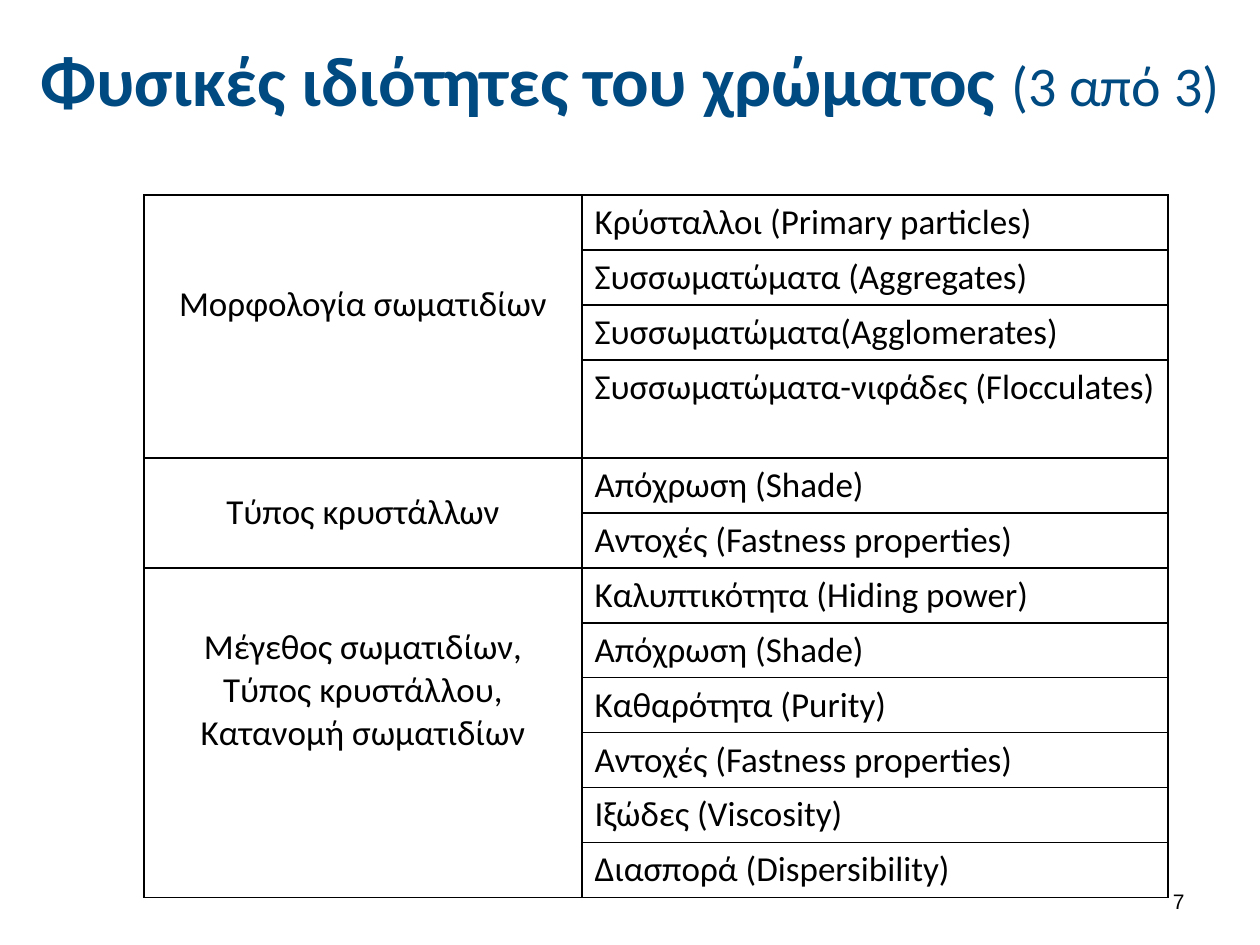
from dataclasses import dataclass

from lxml.etree import SubElement
from pptx import Presentation
from pptx.dml.color import RGBColor
from pptx.enum.text import MSO_ANCHOR as Anchor, PP_ALIGN as Align
from pptx.oxml.ns import qn
from pptx.util import Emu, Pt


@dataclass(frozen=True)
class Theme:
    title_color: str = "004A82"
    text_color: str = "000000"
    border_color: str = "000000"
    font: str = "Calibri"
    number_font: str = "Arial"
    title_size: int = 40
    subtitle_size: int = 32
    table_size: int = 20
    number_size: int = 12


THEME = Theme()
PX_PER_INCH = 126
ROW_HEIGHT = 55
TALL_ROW, TALL_ROW_HEIGHT = 3, 98
COLUMN_WIDTHS = (438, 586)
CELL_MARGIN = 6

# Left-hand lines, extra space below them, right-hand properties
GROUPS = [
    (["Μορφολογία σωματιδίων"], 43,
     ["Κρύσταλλοι (Primary particles)", "Συσσωματώματα (Aggregates)",
      "Συσσωματώματα(Agglomerates)", "Συσσωματώματα-νιφάδες (Flocculates)"]),
    (["Τύπος κρυστάλλων"], 0,
     ["Απόχρωση (Shade)", "Αντοχές (Fastness properties)"]),
    (["Μέγεθος σωματιδίων,", "Τύπος κρυστάλλου,", "Κατανομή σωματιδίων"], 84,
     ["Καλυπτικότητα (Hiding power)", "Απόχρωση (Shade)", "Καθαρότητα (Purity)",
      "Αντοχές (Fastness properties)", "Ιξώδες (Viscosity)",
      "Διασπορά (Dispersibility)"]),
]


def px(length):
    return Emu(round(length * 914400 / PX_PER_INCH))


def add_run(paragraph, text, *, size, color=THEME.text_color, font=THEME.font,
            bold=False):
    run = paragraph.add_run()
    run.text = text
    run.font.size = Pt(size)
    run.font.name = font
    run.font.bold = bold
    run.font.color.rgb = RGBColor.from_string(color)


def add_title(slide, box):
    title = slide.shapes.title
    title.left, title.top, title.width, title.height = map(px, box)
    frame = title.text_frame
    frame.vertical_anchor = Anchor.MIDDLE
    paragraph = frame.paragraphs[0]
    paragraph.alignment = Align.CENTER
    add_run(paragraph, "Φυσικές ιδιότητες του χρώματος ", bold=True,
            size=THEME.title_size, color=THEME.title_color)
    add_run(paragraph, "(3 από 3)", size=THEME.subtitle_size,
            color=THEME.title_color)


def style_cell(cell):
    """Clear the fill and draw a thin border on all four sides."""
    properties = cell._tc.get_or_add_tcPr()
    for side in ("lnL", "lnR", "lnT", "lnB"):
        line = SubElement(properties, qn(f"a:{side}"), w=str(Pt(1)))
        fill = SubElement(line, qn("a:solidFill"))
        SubElement(fill, qn("a:srgbClr"), val=THEME.border_color)
    cell.fill.background()


def write_cell(cell, lines, *, align=Align.LEFT, anchor=Anchor.TOP, space_below=0):
    cell.vertical_anchor = anchor
    cell.margin_top = px(CELL_MARGIN)
    cell.margin_bottom = px(CELL_MARGIN + space_below)
    frame = cell.text_frame
    for index, line in enumerate(lines):
        paragraph = frame.add_paragraph() if index else frame.paragraphs[0]
        paragraph.alignment = align
        add_run(paragraph, line, size=THEME.table_size)


def add_property_table(slide, left, top):
    row_count = sum(len(properties) for _, _, properties in GROUPS)
    heights = [ROW_HEIGHT] * row_count
    heights[TALL_ROW] = TALL_ROW_HEIGHT
    table = slide.shapes.add_table(
        row_count, len(COLUMN_WIDTHS), px(left), px(top),
        px(sum(COLUMN_WIDTHS)), px(sum(heights))).table
    table.first_row = table.horz_banding = False
    for column, width in zip(table.columns, COLUMN_WIDTHS):
        column.width = px(width)
    for row, height in zip(table.rows, heights):
        row.height = px(height)
    for cell in table.iter_cells():
        style_cell(cell)

    first = 0
    for lines, space_below, properties in GROUPS:
        last = first + len(properties) - 1
        table.cell(first, 0).merge(table.cell(last, 0))
        write_cell(table.cell(first, 0), lines, align=Align.CENTER,
                   anchor=Anchor.MIDDLE, space_below=space_below)
        for row, text in enumerate(properties, first):
            cell = table.cell(row, 1)
            write_cell(cell, [text])
            cell.margin_right = 0
        first = last + 1


def add_slide_number(slide, box):
    frame = slide.shapes.add_textbox(*map(px, box)).text_frame
    frame.word_wrap = True
    frame.vertical_anchor = Anchor.MIDDLE
    paragraph = frame.paragraphs[0]
    paragraph.alignment = Align.RIGHT
    add_run(paragraph, "7", size=THEME.number_size, font=THEME.number_font)


def main():
    presentation = Presentation()
    presentation.slide_width, presentation.slide_height = px(1260), px(945)
    slide = presentation.slides.add_slide(presentation.slide_layouts[5])
    add_title(slide, (0, 16, 1260, 125))
    add_property_table(slide, 144, 195)
    add_slide_number(slide, (903, 876, 294, 50))
    presentation.save("out.pptx")


if __name__ == "__main__":
    main()
